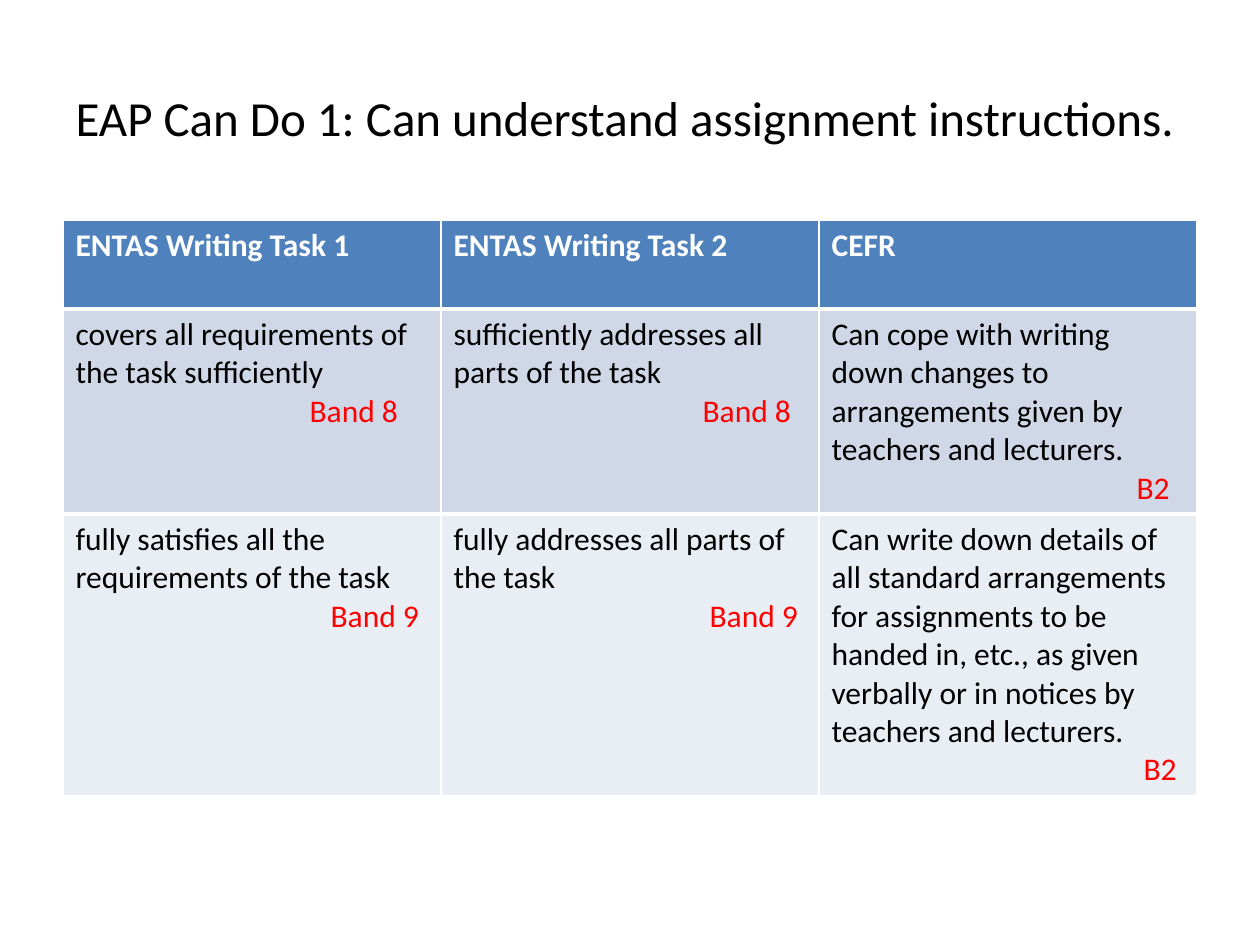
from lxml.etree import SubElement as Sub
from pptx import Presentation
from pptx.dml.color import RGBColor as RGB
from pptx.enum.text import MSO_ANCHOR as Anchor, PP_ALIGN as Align
from pptx.oxml.ns import qn
from pptx.util import Pt

BLACK = RGB(0, 0, 0)
WHITE = RGB(255, 255, 255)
RED = RGB(255, 0, 0)
BLUE = RGB(0x4F, 0x81, 0xBD)
MIST = RGB(0xD0, 0xD8, 0xE8)
PALE = RGB(0xE9, 0xED, 0xF4)
FONT = "Calibri"

HEADS = ["ENTAS Writing Task 1", "ENTAS Writing Task 2", "CEFR"]
ROWS = [
    [("covers all requirements of the task sufficiently", "Band 8", 234),
     ("sufficiently addresses all parts of the task", "Band 8", 249),
     ("Can cope with writing down changes to arrangements given by "
      "teachers and lecturers.", "B2", 305)],
    [("fully satisfies all the requirements of the task", "Band 9", 255),
     ("fully addresses all parts of the task", "Band 9", 256),
     ("Can write down details of all standard arrangements for assignments "
      "to be handed in, etc., as given verbally or in notices by teachers "
      "and lecturers.", "B2", 312)],
]
HEIGHTS = [89, 205, 281]


def px(n):
    """Turn pixels into EMU."""
    return round(n * 914400 / 126)


def style(para, size, color, bold=False):
    """Set the font of a paragraph."""
    font = para.font
    font.name, font.size, font.bold = FONT, Pt(size), bold
    font.color.rgb = color


def paint(cell, color):
    """Fill a cell with one colour."""
    cell.fill.solid()
    cell.fill.fore_color.rgb = color


def edge(cell, side, width):
    """Draw a white border on one side of a cell."""
    line = Sub(cell._tc.get_or_add_tcPr(), qn(f"a:ln{side}"), w=str(Pt(width)))
    Sub(Sub(line, qn("a:solidFill")), qn("a:srgbClr"), val=str(WHITE))


def add_title(slide, text, x, y, w, h):
    """Place the title in the given box."""
    title = slide.shapes.title
    title.left, title.top, title.width, title.height = map(px, (x, y, w, h))
    frame = title.text_frame
    frame.text = text
    frame.vertical_anchor = Anchor.MIDDLE
    para = frame.paragraphs[0]
    para.alignment = Align.LEFT
    style(para, 28, BLACK)


def fill_cell(cell, text, level, indent):
    """Write a descriptor and its indented level."""
    frame = cell.text_frame
    frame.text = text
    style(frame.paragraphs[0], 18, BLACK)
    para = frame.add_paragraph()
    para.text = level
    style(para, 18, RED)
    para._p.get_or_add_pPr().set("marL", str(px(indent)))


def add_grid(slide, x, y, w, h):
    """Place the table of bands in the given box."""
    shape = slide.shapes.add_table(len(HEIGHTS), len(HEADS), *map(px, (x, y, w, h)))
    table = shape.table
    for col in table.columns:
        col.width = px(w // len(HEADS))
    for row, high in zip(table.rows, HEIGHTS):
        row.height = px(high)
    for c, head in enumerate(HEADS):
        cell = table.cell(0, c)
        cell.text = head
        style(cell.text_frame.paragraphs[0], 18, WHITE, True)
        edge(cell, "B", 3)
        edge(table.cell(1, c), "T", 3)
        paint(cell, BLUE)
    for r, (row, color) in enumerate(zip(ROWS, (MIST, PALE)), 1):
        for c, item in enumerate(row):
            cell = table.cell(r, c)
            fill_cell(cell, *item)
            paint(cell, color)


def main():
    """Build and save the slide."""
    deck = Presentation()
    deck.slide_width, deck.slide_height = px(1260), px(945)
    slide = deck.slides.add_slide(deck.slide_layouts[5])
    add_title(slide, "EAP Can Do 1: Can understand assignment instructions.",
              63, 38, 1134, 158)
    add_grid(slide, 63, 220, 1134, sum(HEIGHTS))
    deck.save("out.pptx")


if __name__ == "__main__":
    main()
